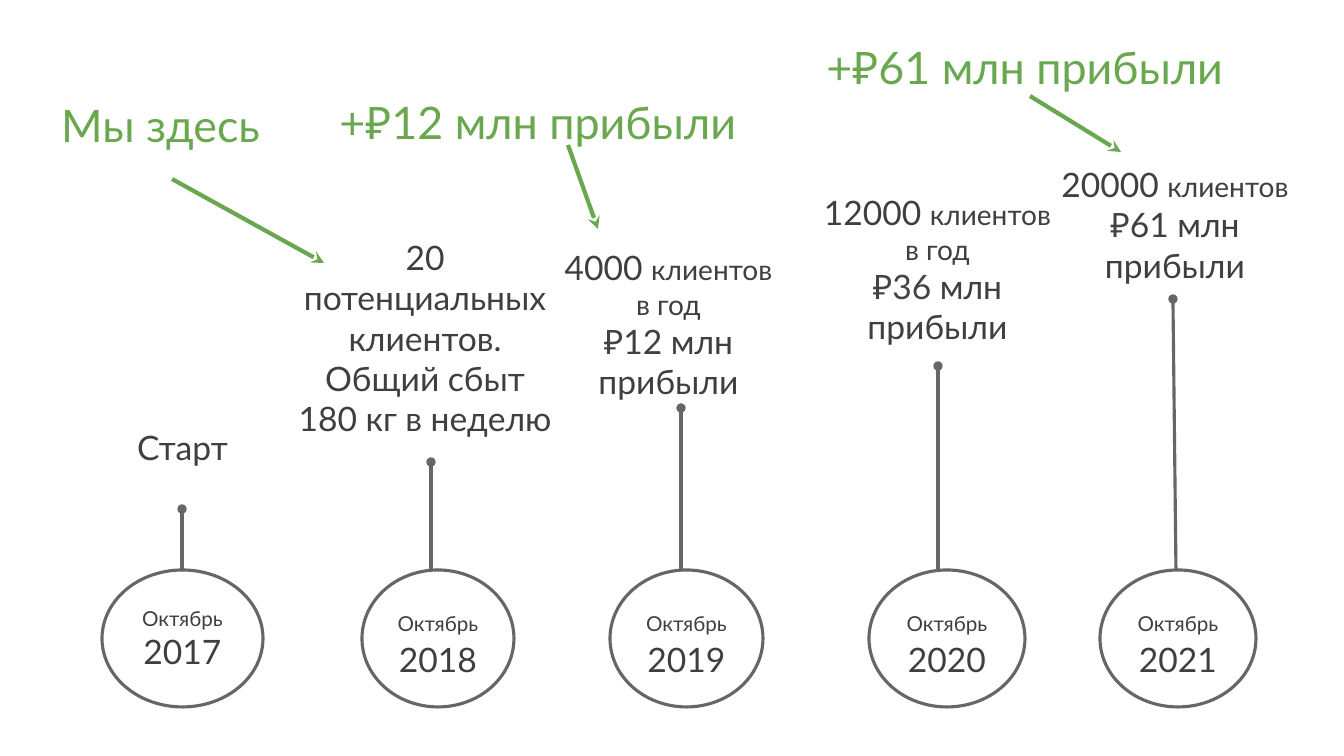
import pptx
import pptx.util
import pptx.dml.color
import pptx.enum.shapes
import pptx.enum.text
import pptx.oxml.ns
import lxml.etree

GREY = pptx.dml.color.RGBColor(0x66, 0x66, 0x66)
DARK = pptx.dml.color.RGBColor(0x3F, 0x3F, 0x3F)
RUBLE = pptx.dml.color.RGBColor(0x43, 0x43, 0x43)
GREEN = pptx.dml.color.RGBColor(0x6A, 0xA8, 0x4F)
FONT = "Lato"
PX = 914400 / 100.8
CIRCLE_TOP, CIRCLE_HEIGHT, INSET = 570, 137, 13
ALIGN = pptx.enum.text.PP_ALIGN

MONTH = ("Октябрь", 14.7, DARK)
CLIENTS = ("клиентов", 20, DARK)
PER_YEAR = [("в год", 20, DARK)]


def big(text, color=DARK):
    return (text, 24, color)


MILESTONES = [
    {"circle": (102, 161), "stem": (182, 509, 182),
     "date": [[MONTH], [big("2017")]],
     "box": (97, 414, 171, 59), "note": [[big("Старт")]]},
    {"circle": (362, 152), "stem": (431, 462, 431),
     "date": [[MONTH, big(" 2018")]],
     "box": (281, 224, 288, 156),
     "note": [[big("20 потенциальных клиентов. Общий сбыт 180 кг в неделю")]]},
    {"circle": (610, 153), "stem": (681, 408, 681),
     "date": [[MONTH, big(" 2019")]],
     "box": (529, 234, 279, 118),
     "note": [[big("4000 "), CLIENTS], PER_YEAR,
              [big("₽", RUBLE), big("12 млн прибыли")]]},
    {"circle": (869, 156), "stem": (938, 366, 938),
     "date": [[MONTH, big(" 2020")]],
     "box": (798, 179, 279, 118),
     "note": [[big("12000 "), CLIENTS], PER_YEAR,
              [big("₽36 ", RUBLE), big("млн прибыли")]]},
    {"circle": (1100, 156), "stem": (1173, 299, 1176),
     "date": [[MONTH, big(" 2021")]],
     "box": (1030, 151, 290, 118),
     "note": [[big("20000 "), CLIENTS],
              [big("₽", RUBLE), big("61 млн прибыли")]]},
]

CALLOUTS = [
    ("Мы здесь", (48, 85, 233, 84), ALIGN.LEFT, (172, 179, 324, 263)),
    ("+₽12 млн прибыли", (312, 82, 452, 84), ALIGN.CENTER, (568, 145, 598, 229)),
    ("+₽61 млн прибыли", (737, 27, 576, 84), ALIGN.CENTER, (1030, 96, 1121, 152)),
]


def px(*values):
    return [pptx.util.Emu(round(v * PX)) for v in values]


def write(sp, lines, align=ALIGN.CENTER, anchor=pptx.enum.text.MSO_ANCHOR.TOP):
    tf = sp.text_frame
    inset = px(INSET)[0]
    frame = {"word_wrap": True, "vertical_anchor": anchor,
             "margin_left": inset, "margin_right": inset,
             "margin_top": inset, "margin_bottom": inset}
    for name, value in frame.items():
        setattr(tf, name, value)
    for i, line in enumerate(lines):
        p = tf.add_paragraph() if i else tf.paragraphs[0]
        p.alignment = align
        for text, size, color in line:
            r = p.add_run()
            r.text = text
            for name, value in {"name": FONT, "size": pptx.util.Pt(size)}.items():
                setattr(r.font, name, value)
            r.font.color.rgb = color


def add_line(shapes, ends, color, width, end_tag, end_type):
    sp = shapes.add_connector(pptx.enum.shapes.MSO_CONNECTOR.STRAIGHT, *px(*ends))
    sp.line.color.rgb = color
    sp.line.width = pptx.util.Pt(width)
    qn = pptx.oxml.ns.qn
    ln = sp.line._get_or_add_ln()
    lxml.etree.SubElement(ln, qn(end_tag)).set("type", end_type)
    lxml.etree.SubElement(sp._element.spPr, qn("a:effectLst"))


def add_milestone(shapes, item):
    left, width = item["circle"]
    sp = shapes.add_shape(pptx.enum.shapes.MSO_SHAPE.OVAL,
                          *px(left, CIRCLE_TOP, width, CIRCLE_HEIGHT))
    sp.shadow.inherit = False
    sp.fill.background()
    sp.line.color.rgb = GREY
    sp.line.width = pptx.util.Pt(2.25)
    write(sp, item["date"], anchor=pptx.enum.text.MSO_ANCHOR.MIDDLE)
    x, top, foot = item["stem"]
    add_line(shapes, (x, top, foot, CIRCLE_TOP), GREY, 2.25, "a:headEnd", "oval")
    write(shapes.add_textbox(*px(*item["box"])), item["note"])


def main():
    prs = pptx.Presentation()
    prs.slide_width, prs.slide_height = px(1344, 756)
    shapes = prs.slides.add_slide(prs.slide_layouts[6]).shapes
    for item in MILESTONES:
        add_milestone(shapes, item)
    for text, box, align, arrow in CALLOUTS:
        add_line(shapes, arrow, GREEN, 3, "a:tailEnd", "stealth")
        write(shapes.add_textbox(*px(*box)), [[(text, 32, GREEN)]], align)
    prs.save("out.pptx")


if __name__ == "__main__":
    main()
